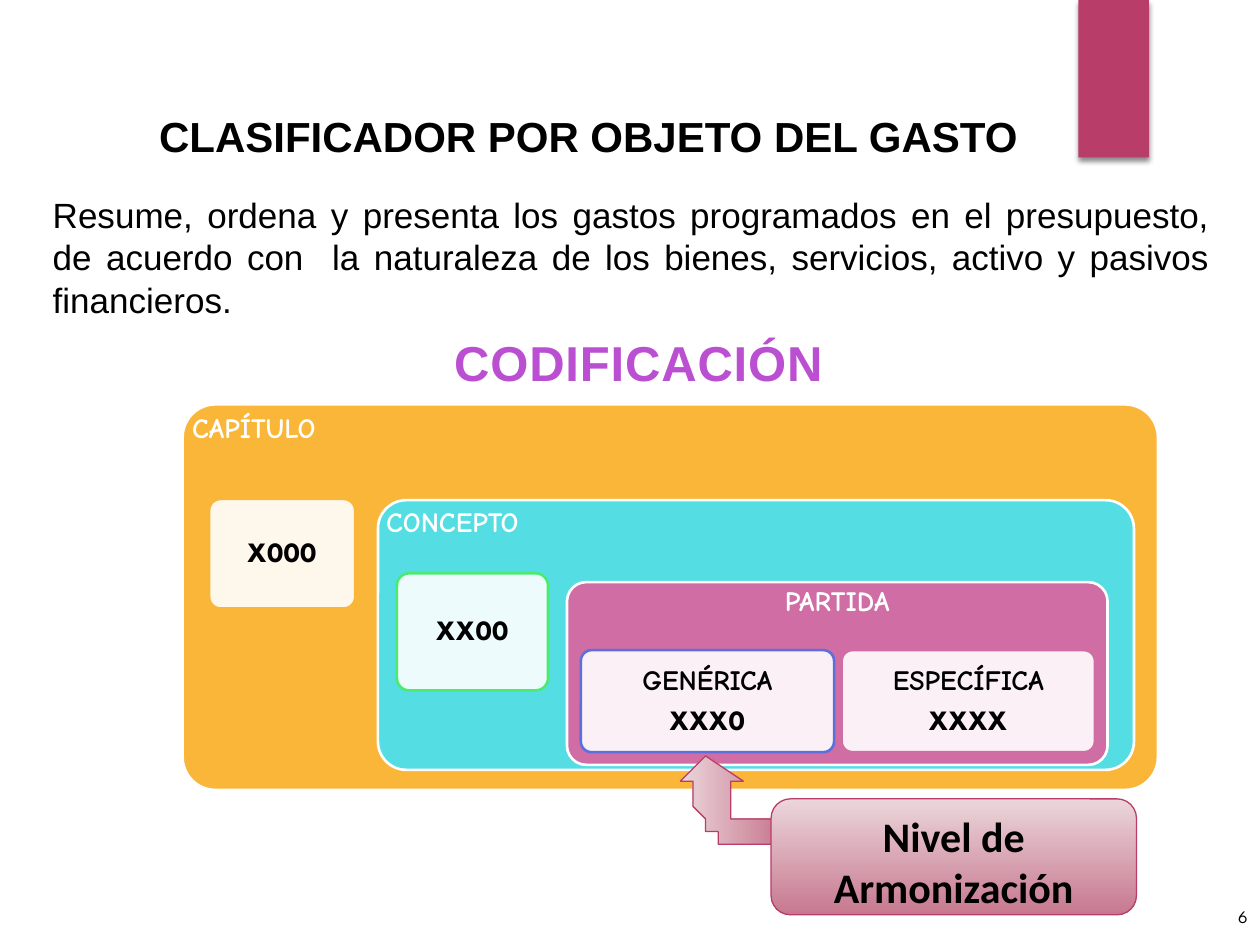
from lxml import etree
from pptx import Presentation
from pptx.dml.color import RGBColor
from pptx.enum.shapes import MSO_SHAPE
from pptx.enum.text import MSO_ANCHOR as Anchor, PP_ALIGN as Align
from pptx.oxml.ns import qn
from pptx.util import Inches, Pt

BLACK = RGBColor(0x00, 0x00, 0x00)
WHITE = RGBColor(0xFF, 0xFF, 0xFF)
CRIMSON = RGBColor(0xB8, 0x3D, 0x68)
ORANGE = RGBColor(0xF9, 0xB6, 0x39)
CYAN = RGBColor(0x54, 0xDD, 0xE3)
GREEN = RGBColor(0x4B, 0xEB, 0x72)
PINK = RGBColor(0xCF, 0x6D, 0xA4)
BLUE = RGBColor(0x5C, 0x70, 0xDD)
ROSE_LIGHT = RGBColor(0xEB, 0xD6, 0xDB)
ROSE_DARK = RGBColor(0xC7, 0x78, 0x8F)
PURPLE_LIGHT = RGBColor(0xBB, 0x4F, 0xD2)
PURPLE_DARK = RGBColor(0x86, 0x35, 0x98)
LABEL_FONT, CODE_FONT = "Comic Neue", "League Spartan"

presentation = Presentation()
presentation.slide_width, presentation.slide_height = Inches(10), Inches(7.5)
slide = presentation.slides.add_slide(presentation.slide_layouts[6])
shapes = slide.shapes
CELL = presentation.slide_width / 100  # grid of 100 columns by 75 rows


def write(shape, *lines, size=16, color=BLACK, bold=True, align=Align.CENTER,
          anchor=Anchor.TOP, margin=None, spacing=None, after=0):
    """Fill a shape with paragraphs, each given as (text, font name)."""
    frame = shape.text_frame
    frame.word_wrap = True
    frame.vertical_anchor = anchor
    if margin is not None:
        frame.margin_left = frame.margin_right = margin
        frame.margin_top = frame.margin_bottom = margin
    for index, (text, font_name) in enumerate(lines):
        paragraph = frame.add_paragraph() if index else frame.paragraphs[0]
        paragraph.alignment = align
        paragraph.line_spacing = spacing
        paragraph.space_after = Pt(after)
        run = paragraph.add_run()
        run.text = text
        run.font.name, run.font.size, run.font.bold = font_name, Pt(size), bold
        run.font.color.rgb = color
    return run


def paint_gradient(fill, angle, first, last, start=0):
    fill.gradient()
    fill.gradient_angle = angle
    stops = fill.gradient_stops
    stops[0].color.rgb, stops[0].position = first, start
    stops[1].color.rgb, stops[1].position = last, 1


# Ribbon at the top edge
ribbon = shapes.add_shape(MSO_SHAPE.RECTANGLE, *[int(n * CELL) for n in (85.6, 0, 5.6, 12.5)])
ribbon.fill.solid()
ribbon.fill.fore_color.rgb = CRIMSON
ribbon.line.fill.background()
effects = etree.SubElement(ribbon._element.spPr, qn("a:effectLst"))
shadow = etree.SubElement(effects, qn("a:outerShdw"), blurRad=str(Pt(3)), dist=str(Pt(2)),
                          dir="5400000", rotWithShape="0")
shadow_color = etree.SubElement(shadow, qn("a:srgbClr"), val=str(BLACK))
etree.SubElement(shadow_color, qn("a:alpha"), val="45000")

# Title, definition, heading and page number
definition = ("Resume, ordena y presenta los gastos programados en el presupuesto, "
              "de acuerdo con  la naturaleza de los bienes, servicios, activo y pasivos financieros.")
texts = [
    ((7.8, 8.3, 77.8, 5), "CLASIFICADOR POR OBJETO DEL GASTO", "Arial", dict(size=24)),
    ((3.2, 14.9, 93.8, 11.1), definition, "Arial",
     dict(size=20, bold=False, align=Align.JUSTIFY)),
    ((96, 70.1, 4, 4), "6", CODE_FONT,
     dict(size=10, bold=False, align=Align.RIGHT, anchor=Anchor.BOTTOM)),
    ((15.4, 25.9, 71.7, 5.7), "CODIFICACIÓN ", "Arial", dict(size=28)),
]
for place, text, font_name, style in texts:
    box = shapes.add_textbox(*[int(n * CELL) for n in place])
    run = write(box, (text, font_name), **style)
paint_gradient(run.font.fill, 270, PURPLE_LIGHT, PURPLE_DARK, start=0.25)
run.font._element.set("spc", "50")

# Nested levels, each holding its code cards
LEVEL = dict(color=WHITE, align=Align.LEFT)
CARD = dict(anchor=Anchor.MIDDLE)
panels = [
    ((14.5, 32.1, 77.4, 30.6), 0.085, ORANGE, WHITE, LEVEL, [("CAPÍTULO", LABEL_FONT)]),
    ((16.6, 39.6, 11.6, 8.7), 0.105, None, ORANGE, CARD, [("X000", CODE_FONT)]),
    ((30, 39.7, 60, 21.4), 0.105, CYAN, WHITE, LEVEL, [("CONCEPTO", LABEL_FONT)]),
    ((31.5, 45.5, 12, 9.3), 0.105, None, GREEN, CARD, [("XX00", CODE_FONT)]),
    ((45, 46.2, 42.9, 14.5), 0.105, PINK, WHITE, dict(color=WHITE), [("PARTIDA", LABEL_FONT)]),
    ((46.1, 51.6, 20.1, 8.1), 0.105, None, BLUE, CARD,
     [("GENÉRICA", LABEL_FONT), ("XXX0", CODE_FONT)]),
    ((66.8, 51.6, 20.1, 8.1), 0.105, None, PINK, CARD,
     [("ESPECÍFICA", LABEL_FONT), ("XXXX", CODE_FONT)]),
]
for place, corner, fill_color, line_color, style, lines in panels:
    panel = shapes.add_shape(MSO_SHAPE.ROUNDED_RECTANGLE, *[int(n * CELL) for n in place])
    panel.shadow.inherit = False
    panel.adjustments[0] = corner
    panel.fill.solid()
    panel.fill.fore_color.rgb = fill_color or WHITE
    if fill_color is None:
        card_color = panel._element.spPr.find(qn("a:solidFill"))[0]
        etree.SubElement(card_color, qn("a:alpha"), val="90000")
    panel.line.color.rgb = line_color
    panel.line.width = Pt(1.5)
    write(panel, *lines, margin=0, spacing=0.9, after=5.6, **style)

# Bent arrow: straight corners plus two cubic curves
outer = [(55.2, 62.9), (55.2, 65.1), (56.8, 66.9), (58.6, 66.9)]
inner = [(58.6, 64.8), (58, 64.8), (57.6, 64), (57.6, 62.9)]
curves = []
for curve in (outer, inner):
    steps = [n / 16 for n in range(17)]
    curves.append([tuple(sum(w * point[axis] for w, point in zip(
        ((1 - t) ** 3, 3 * t * (1 - t) ** 2, 3 * t * t * (1 - t), t ** 3), curve))
        for axis in (0, 1)) for t in steps])
outline = [(54.2, 62.1), (55.2, 62.1), *curves[0], (62.1, 66.9), (62.1, 64.8),
           *curves[1], (57.6, 62.1), (58.6, 62.1)]
builder = shapes.build_freeform(56.4, 60, scale=CELL)
builder.add_line_segments(outline, close=True)
arrow = builder.convert_to_shape()

# Callout at the arrow's tail
callout = shapes.add_shape(MSO_SHAPE.ROUNDED_RECTANGLE,
                           *[int(n * CELL) for n in (61.2, 63.4, 29, 9.2)])
write(callout, ("Nivel de Armonización", "Calibri"), size=24, after=10)
for shape, angle in ((arrow, 0), (callout, 270)):
    shape.shadow.inherit = False
    paint_gradient(shape.fill, angle, ROSE_LIGHT, ROSE_DARK)
    shape.line.color.rgb = CRIMSON
    shape.line.width = Pt(0.75)

presentation.save("out.pptx")
